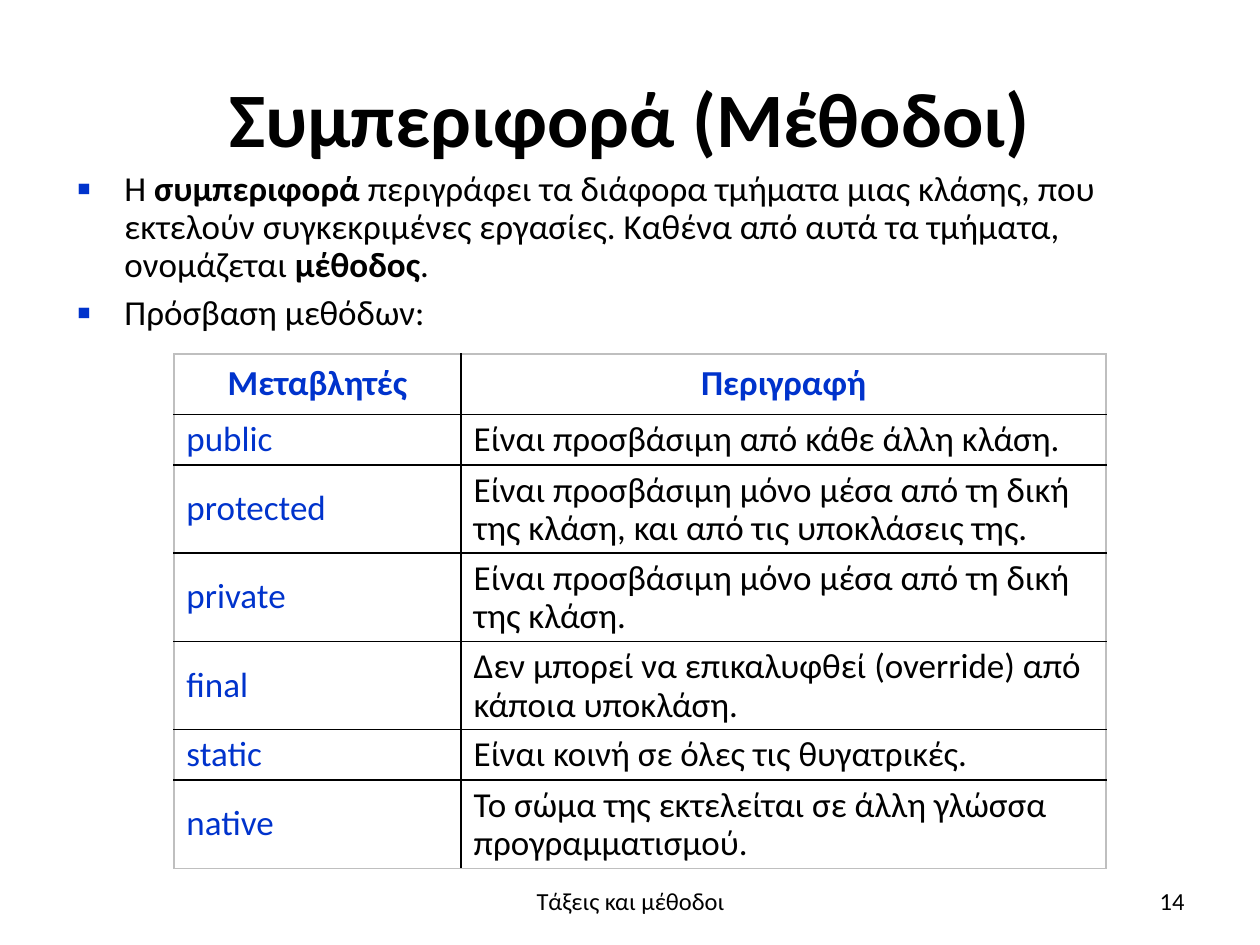
from lxml import etree
from pptx import Presentation
from pptx.dml.color import RGBColor
from pptx.enum import text as t
from pptx.oxml import ns
from pptx.util import Inches, Pt

FONT = "Calibri"
BLACK = RGBColor(0x00, 0x00, 0x00)
BLUE = RGBColor(0x00, 0x33, 0xCC)
GREY = RGBColor(0xBF, 0xBF, 0xBF)

TITLE = "Συμπεριφορά (Μέθοδοι)"
BULLETS = [
    [("Η ", False), ("συμπεριφορά", True),
     (" περιγράφει τα διάφορα τμήματα μιας κλάσης, που εκτελούν συγκεκριμένες "
      "εργασίες. Καθένα από αυτά τα τμήματα, ονομάζεται ", False),
     ("μέθοδος", True), (".", False)],
    [("Πρόσβαση μεθόδων:", False)],
]
ROWS = [
    ("Μεταβλητές", "Περιγραφή"),
    ("public", "Είναι προσβάσιμη από κάθε άλλη κλάση."),
    ("protected", "Είναι προσβάσιμη µόνο μέσα από τη δική της κλάση, "
                  "και από τις υποκλάσεις της."),
    ("private", "Είναι προσβάσιμη µόνο μέσα από τη δική της κλάση."),
    ("final", "Δεν μπορεί να επικαλυφθεί (override) από κάποια υποκλάση."),
    ("static", "Είναι κοινή σε όλες τις θυγατρικές."),
    ("native", "Το σώμα της εκτελείται σε άλλη γλώσσα προγραμματισμού."),
]
COL_WIDTHS = [2.28, 5.12]
ROW_HEIGHTS = [0.48, 0.35, 0.6, 0.6, 0.6, 0.4, 0.6]
FOOTERS = [
    ("Τάξεις και μέθοδοι", (3.42, 6.95, 3.17, 0.4), t.PP_ALIGN.CENTER),
    ("14", (7.17, 6.95, 2.33, 0.4), t.PP_ALIGN.RIGHT),
]


def style(p, size, color=BLACK, bold=None, align=t.PP_ALIGN.LEFT):
    p.alignment = align
    p.font.name, p.font.size, p.font.bold = FONT, Pt(size), bold
    p.font.color.rgb = color


def add_text(s, box, anchor):
    tf = s.shapes.add_textbox(*map(Inches, box)).text_frame
    tf.word_wrap = True
    tf.vertical_anchor = anchor
    return tf


def add_child(parent, tag, **attrs):
    return etree.SubElement(parent, ns.qn(tag), attrs)


def set_bullet(p):
    pPr = p._p.get_or_add_pPr()
    pPr.set("marL", str(Inches(0.38)))
    pPr.set("indent", str(Inches(-0.38)))
    add_child(add_child(pPr, "a:buClr"), "a:srgbClr", val=str(BLUE))
    add_child(pPr, "a:buSzPct", val="120000")
    add_child(pPr, "a:buFont", typeface="Arial")
    add_child(pPr, "a:buChar", char="▪")


def set_borders(cell, outer):
    tcPr = cell._tc.get_or_add_tcPr()
    for side in "LRTB":
        ln = add_child(tcPr, "a:ln" + side, w=str(Pt(1)))
        color = GREY if side in outer else BLACK
        add_child(add_child(ln, "a:solidFill"), "a:srgbClr", val=str(color))


def add_title(s):
    title = s.shapes.title
    title.left, title.top, title.width, title.height = map(Inches, (0.5, 0.3, 9, 1.25))
    tf = title.text_frame
    tf.text = TITLE
    tf.vertical_anchor = t.MSO_ANCHOR.MIDDLE
    style(tf.paragraphs[0], 44, bold=True, align=t.PP_ALIGN.CENTER)


def add_bullets(s):
    tf = add_text(s, (0.51, 1.31, 9, 1.53), t.MSO_ANCHOR.TOP)
    for i, runs in enumerate(BULLETS):
        p = tf.add_paragraph() if i else tf.paragraphs[0]
        style(p, 20)
        p.line_spacing, p.space_after = 0.9, Pt(6)
        set_bullet(p)
        for wording, bold in runs:
            r = p.add_run()
            r.text, r.font.bold = wording, bold


def add_grid(s):
    n_rows, n_cols = len(ROWS), len(COL_WIDTHS)
    table = s.shapes.add_table(
        n_rows, n_cols, Inches(1.38), Inches(2.81),
        Inches(sum(COL_WIDTHS)), Inches(sum(ROW_HEIGHTS))).table
    table.horz_banding = False
    for col, width in zip(table.columns, COL_WIDTHS):
        col.width = Inches(width)
    for i, (row, height) in enumerate(zip(ROWS, ROW_HEIGHTS)):
        table.rows[i].height = Inches(height)
        for j, wording in enumerate(row):
            cell = table.cell(i, j)
            cell.text = wording
            cell.vertical_anchor = t.MSO_ANCHOR.MIDDLE
            header = i == 0
            p = cell.text_frame.paragraphs[0]
            style(p, 20, BLUE if header or j == 0 else BLACK, header,
                  t.PP_ALIGN.CENTER if header else t.PP_ALIGN.LEFT)
            p.line_spacing = 0.9
            edges = {"L": j == 0, "R": j == n_cols - 1,
                     "T": header, "B": i == n_rows - 1}
            set_borders(cell, [side for side, outer in edges.items() if outer])
            cell.fill.background()


def main():
    prs = Presentation()
    prs.slide_width, prs.slide_height = Inches(10), Inches(7.5)
    s = prs.slides.add_slide(prs.slide_layouts[5])
    add_title(s)
    add_bullets(s)
    add_grid(s)
    for wording, box, align in FOOTERS:
        tf = add_text(s, box, t.MSO_ANCHOR.MIDDLE)
        tf.text = wording
        style(tf.paragraphs[0], 14, align=align)
    prs.save("out.pptx")


if __name__ == "__main__":
    main()
